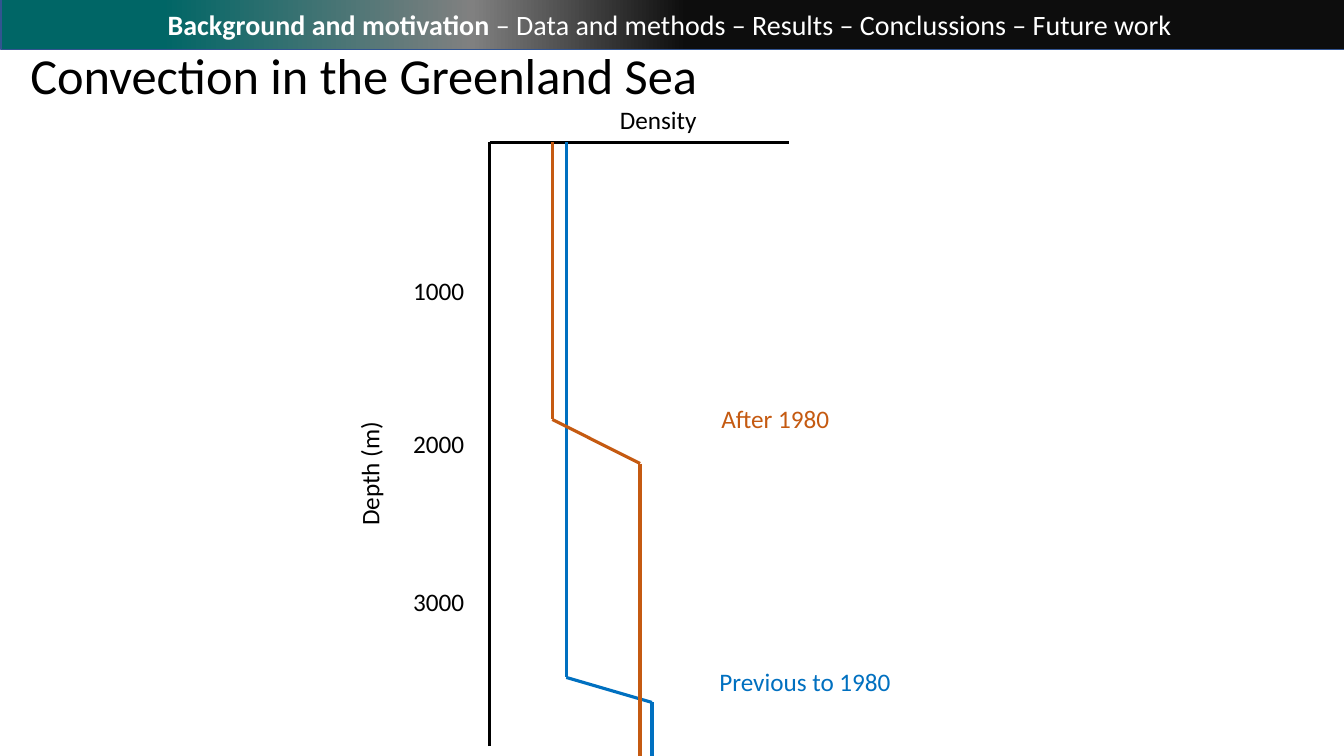
from copy import deepcopy
from itertools import pairwise

from pptx import Presentation
from pptx.dml.color import RGBColor
from pptx.enum.shapes import MSO_CONNECTOR, MSO_SHAPE
from pptx.enum.text import MSO_ANCHOR, MSO_AUTO_SIZE, PP_ALIGN
from pptx.oxml.ns import qn
from pptx.util import Cm, Pt
from lxml.etree import SubElement

BLACK, WHITE, BLUE, ORANGE = "000000", "FFFFFF", "0070C0", "C55A11"
TOP, BOTTOM = 3.58, 19.05
LABEL_HEIGHT = 1.02


def rgb(code):
    return RGBColor.from_string(code)


def set_values(target, values):
    for name, value in values.items():
        setattr(target, name, value)


def place(shape, left, top, width, height):
    set_values(shape, {"left": Cm(left), "top": Cm(top),
                       "width": Cm(width), "height": Cm(height)})


def add_span(para, text, size, color, bold=False):
    span = para.add_run()
    span.text = text
    set_values(span.font, {"name": "Calibri", "size": Pt(size), "bold": bold})
    span.font.color.rgb = rgb(color)


def add_title(page, text):
    title = page.shapes.title
    place(title, 0.51, 0.99, 17.48, 1.8)
    set_values(title.text_frame, {"word_wrap": False, "auto_size": MSO_AUTO_SIZE.NONE,
                                  "vertical_anchor": MSO_ANCHOR.TOP})
    para = title.text_frame.paragraphs[0]
    set_values(para, {"alignment": PP_ALIGN.LEFT, "line_spacing": 1.0})
    add_span(para, text, 36, BLACK)


def add_label(page, text, left, top, width, color=BLACK, rotation=0):
    box = page.shapes.add_textbox(Cm(left), Cm(top), Cm(width), Cm(LABEL_HEIGHT))
    box.rotation = rotation
    set_values(box.text_frame, {"word_wrap": False,
                                "auto_size": MSO_AUTO_SIZE.SHAPE_TO_FIT_TEXT})
    add_span(box.text_frame.paragraphs[0], text, 18, color)


def add_profile(page, points, color):
    """Join consecutive points with straight lines."""
    for start, end in pairwise(points):
        line = page.shapes.add_connector(
            MSO_CONNECTOR.STRAIGHT, *(Cm(value) for value in start + end))
        line.line.color.rgb = rgb(color)
        line.line.width = Pt(2.25)
        SubElement(line._element.spPr, qn("a:effectLst"))


def add_banner(page, current, others):
    banner = page.shapes.add_shape(
        MSO_SHAPE.RECTANGLE, Cm(0.03), Cm(-0.05), Cm(33.86), Cm(1.3))
    banner.shadow.inherit = False
    banner.line.color.rgb = rgb("325491")
    banner.line.width = Pt(1)

    # Three-stop gradient, left to right
    banner.fill.gradient()
    banner.fill.gradient_angle = 0
    stop_list = banner._element.spPr.find(qn("a:gradFill")).find(qn("a:gsLst"))
    stop_list.append(deepcopy(stop_list[-1]))
    stops = [(0.12, "006666"), (0.35, "808080"), (0.51, "0D0D0D")]
    for stop, (position, color) in zip(banner.fill.gradient_stops, stops):
        stop.position = position
        stop.color.rgb = rgb(color)

    banner.text_frame.vertical_anchor = MSO_ANCHOR.MIDDLE
    para = banner.text_frame.paragraphs[0]
    para.alignment = PP_ALIGN.CENTER
    add_span(para, current, 20, WHITE, bold=True)
    add_span(para, others, 20, WHITE)


def main():
    deck = Presentation()
    set_values(deck, {"slide_width": Cm(33.87), "slide_height": Cm(19.05)})
    page = deck.slides.add_slide(deck.slide_layouts.get_by_name("Title Only"))

    # Axes
    add_profile(page, [(12.34, 18.8), (12.34, TOP)], BLACK)
    add_profile(page, [(12.34, TOP), (19.89, TOP)], BLACK)
    for depth, top in [("1000", 6.81), ("2000", 10.67), ("3000", 14.66)]:
        add_label(page, depth, 10.16, top, 1.8)
    add_label(page, "Density", 15.37, 2.51, 2.46)
    add_label(page, "Depth (m)", 7.72, 11.4, 3.18, rotation=270)

    # Density profiles
    add_profile(page, [(14.27, TOP), (14.27, 17.07), (16.43, 17.7), (16.43, BOTTOM)], BLUE)
    add_profile(page, [(13.92, TOP), (13.92, 10.57), (16.13, 11.68), (16.13, BOTTOM)], ORANGE)
    add_label(page, "Previous to 1980", 17.88, 16.66, 5.03, BLUE)
    add_label(page, "After 1980", 17.93, 10.03, 3.28, ORANGE)

    # Heading
    add_banner(page, "Background and motivation ",
               "– Data and methods – Results – Conclussions – Future work ")
    add_title(page, "Convection in the Greenland Sea")

    deck.save("out.pptx")


if __name__ == "__main__":
    main()
